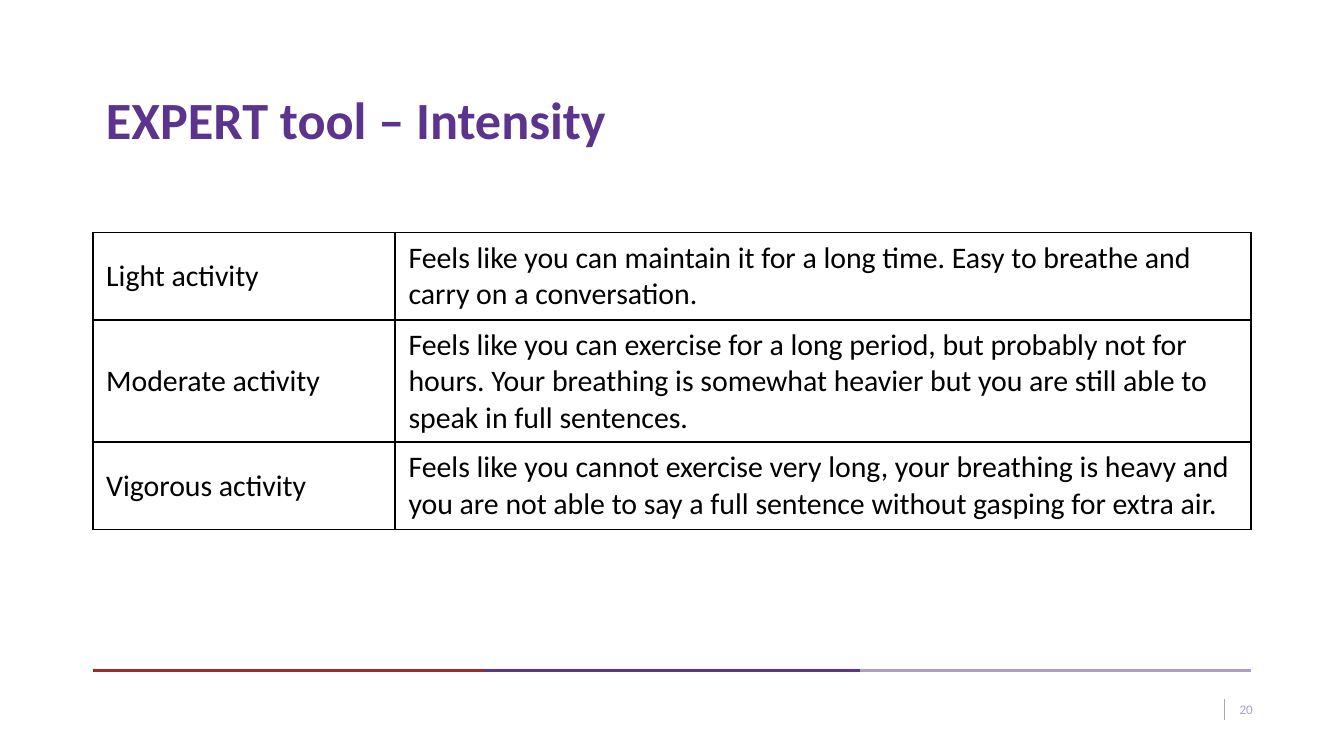
import lxml.etree
import pptx
import pptx.dml.color
import pptx.enum.shapes
import pptx.enum.text
import pptx.oxml.ns
import pptx.util
from pptx.util import Inches

PURPLE, RED, LILAC, BLACK = "5E358C", "9E292E", "AC9EC6", "000000"
FONT = "Calibri"
MIDDLE = pptx.enum.text.MSO_ANCHOR.MIDDLE
ALIGN = pptx.enum.text.PP_ALIGN

INTENSITIES = [
    ("Light activity",
     "Feels like you can maintain it for a long time. "
     "Easy to breathe and carry on a conversation."),
    ("Moderate activity",
     "Feels like you can exercise for a long period, but probably not for hours. "
     "Your breathing is somewhat heavier but you are still able to speak in full sentences."),
    ("Vigorous activity",
     "Feels like you cannot exercise very long, your breathing is heavy and "
     "you are not able to say a full sentence without gasping for extra air."),
]


def color(value):
    return pptx.dml.color.RGBColor.from_string(value)


def write(frame, text, size, text_color, bold=False):
    """Fill a text frame with one paragraph and return that paragraph."""
    frame.text = text
    para = frame.paragraphs[0]
    for span in para.runs:
        span.font.name = FONT
        span.font.size = pptx.util.Pt(size)
        span.font.bold = bold
        span.font.color.rgb = color(text_color)
    return para


def add_text(page, left, top, width, height, text, size, text_color, bold=False):
    box = page.shapes.add_textbox(Inches(left), Inches(top), Inches(width), Inches(height))
    frame = box.text_frame
    frame.word_wrap = True
    frame.vertical_anchor = MIDDLE
    return write(frame, text, size, text_color, bold)


def add_line(page, x1, y1, x2, y2, line_color, weight):
    line = page.shapes.add_connector(
        pptx.enum.shapes.MSO_CONNECTOR.STRAIGHT,
        Inches(x1), Inches(y1), Inches(x2), Inches(y2))
    line.line.color.rgb = color(line_color)
    line.line.width = pptx.util.Pt(weight)
    lxml.etree.SubElement(line._element.spPr, pptx.oxml.ns.qn("a:effectLst"))


def add_borders(cell, line_color, weight):
    """Outline a cell; call before setting its fill, which must come after."""
    qn = pptx.oxml.ns.qn
    properties = cell._tc.get_or_add_tcPr()
    for side in ("a:lnL", "a:lnR", "a:lnT", "a:lnB"):
        border = lxml.etree.SubElement(
            properties, qn(side), w=str(pptx.util.Pt(weight)))
        fill = lxml.etree.SubElement(border, qn("a:solidFill"))
        lxml.etree.SubElement(fill, qn("a:srgbClr"), val=line_color)


def add_table(page, left, top, widths, heights, rows):
    table = page.shapes.add_table(
        len(rows), len(widths), Inches(left), Inches(top),
        Inches(sum(widths)), Inches(sum(heights))).table
    table.first_row = False
    table.horz_banding = False
    for column, width in zip(table.columns, widths):
        column.width = Inches(width)
    for row, height, texts in zip(table.rows, heights, rows):
        row.height = Inches(height)
        for cell, text in zip(row.cells, texts):
            add_borders(cell, BLACK, 1)
            cell.fill.background()
            cell.vertical_anchor = MIDDLE
            write(cell.text_frame, text, 16, BLACK)


def add_footer(page, number):
    stops = [0.69, 3.6, 6.4, 9.31]
    for start, end, line_color in zip(stops, stops[1:], (RED, PURPLE, LILAC)):
        add_line(page, start, 4.99, end, 4.99, line_color, 1.5)
    add_line(page, 9.11, 5.2, 9.11, 5.36, LILAC, 0.75)
    para = add_text(page, 9.05, 5.13, 0.37, 0.3, number, 7, LILAC)
    para.alignment = ALIGN.RIGHT


def main():
    deck = pptx.Presentation()
    deck.slide_width, deck.slide_height = Inches(10), Inches(10 * 9 / 16)
    page = deck.slides.add_slide(deck.slide_layouts[6])
    add_footer(page, "20")
    title = add_text(page, 0.69, 0.44, 8.62, 0.95,
                     "EXPERT tool – Intensity", 28, "5D348D", bold=True)
    title.line_spacing = 0.9
    add_table(page, 0.69, 1.73, [2.25, 6.37], [0.65, 0.91, 0.65], INTENSITIES)
    deck.save("out.pptx")


if __name__ == "__main__":
    main()
